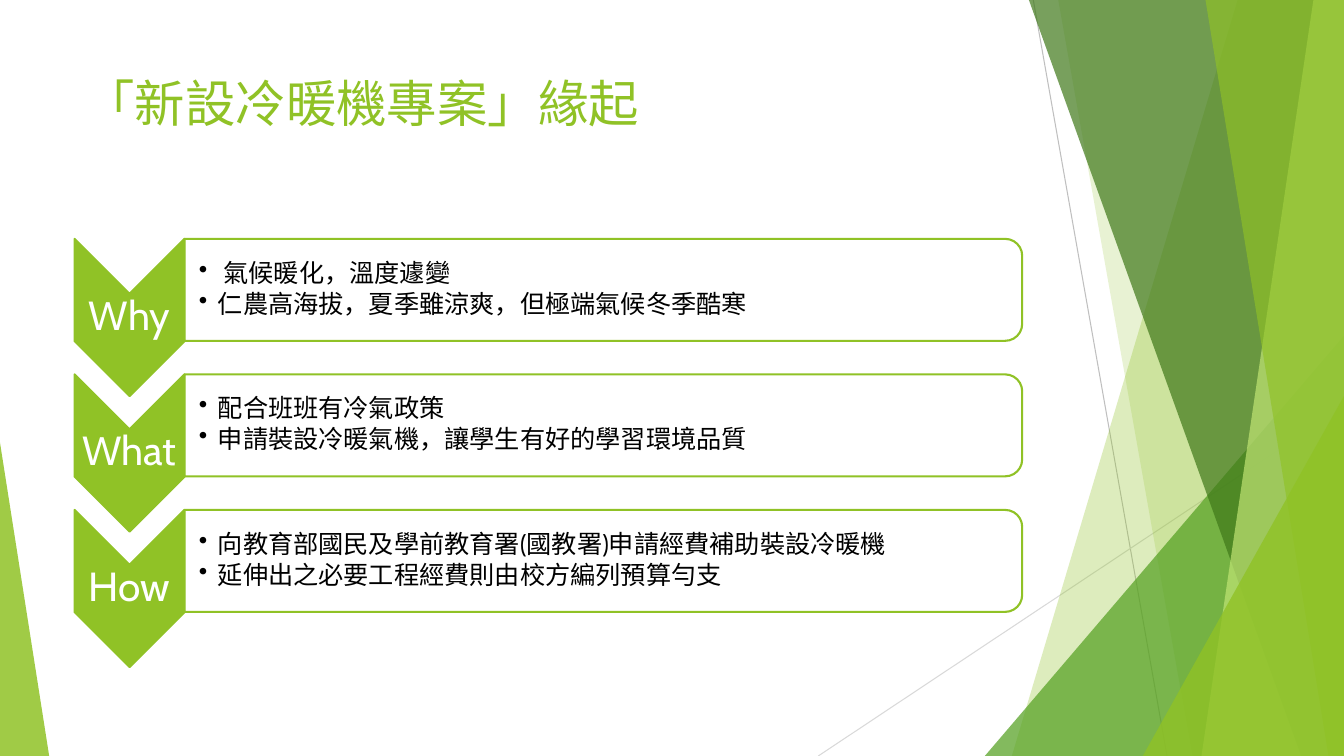
from dataclasses import dataclass

from lxml import etree
from pptx import Presentation
from pptx import util as u
from pptx.dml.color import RGBColor
from pptx.enum import shapes, text
from pptx.oxml.ns import qn

WIDTH, HEIGHT = 33.87, 19.05
STEP_TOP, STEP_PITCH = 6.02, 3.415
STEPS = [
    ("Why", [" 氣候暖化，溫度遽變", "仁農高海拔，夏季雖涼爽，但極端氣候冬季酷寒"]),
    ("What", ["配合班班有冷氣政策", "申請裝設冷暖氣機，讓學生有好的學習環境品質"]),
    ("How", ["向教育部國民及學前教育署(國教署)申請經費補助裝設冷暖機",
             "延伸出之必要工程經費則由校方編列預算勻支"]),
]


@dataclass(frozen=True)
class Theme:
    """Colours, font and type sizes of the deck."""
    lime: str = "90C226"
    green: str = "54A021"
    forest: str = "3F7819"
    pale: str = "C0E474"
    white: str = "FFFFFF"
    black: str = "000000"
    gray: str = "BFBFBF"
    light_gray: str = "D9D9D9"
    font: str = "Cabin"
    title: int = 36
    label: int = 29
    body: int = 18


def write_text(frame, lines, *, font, size, color, align=text.PP_ALIGN.LEFT,
               line_spacing=1.0, space_after=0, bullet_indent=0):
    """Write each line as a paragraph, bulleted when an indent is given."""
    for index, line in enumerate(lines):
        paragraph = frame.add_paragraph() if index else frame.paragraphs[0]
        paragraph.alignment = align
        paragraph.line_spacing = line_spacing
        paragraph.space_after = u.Pt(space_after)
        run = paragraph.add_run()
        run.text = line
        run.font.name = font
        run.font.size = u.Pt(size)
        run.font.color.rgb = RGBColor.from_string(color)
        if bullet_indent:
            properties = paragraph._p.get_or_add_pPr()
            properties.set("marL", str(u.Cm(bullet_indent)))
            properties.set("indent", str(-u.Cm(bullet_indent)))
            etree.SubElement(properties, qn("a:buChar")).set("char", "•")


class SlideBuilder:
    """Draws styled elements on the current slide, measured in centimetres."""

    def __init__(self, slide, theme):
        self.slide = slide
        self.theme = theme

    def paint(self, shape, color, opacity=100, outline=None):
        """Set the fill, its opacity and the outline of a shape."""
        shape.shadow.inherit = False
        shape.fill.solid()
        shape.fill.fore_color.rgb = RGBColor.from_string(color)
        if opacity < 100:
            fill_color = shape._element.spPr.find(qn("a:solidFill"))[0]
            etree.SubElement(fill_color, qn("a:alpha")).set("val", str(opacity * 1000))
        if outline:
            shape.line.color.rgb = RGBColor.from_string(outline)
            shape.line.width = u.Pt(1.5)
        else:
            shape.line.fill.background()

    def line(self, start, end, color):
        """Draw a thin straight line."""
        connector = self.slide.shapes.add_connector(
            shapes.MSO_CONNECTOR.STRAIGHT, *(u.Cm(value) for value in start + end))
        connector.line.color.rgb = RGBColor.from_string(color)
        connector.line.width = u.Pt(0.75)
        etree.SubElement(connector._element.spPr, qn("a:effectLst"))

    def facet(self, top_x, bottom_x, color, opacity):
        """Draw a full-height panel from a slanted edge to the right side."""
        corners = [(WIDTH, 0), (WIDTH, HEIGHT), (bottom_x, HEIGHT)]
        builder = self.slide.shapes.build_freeform(u.Cm(top_x), 0)
        builder.add_line_segments([(u.Cm(x), u.Cm(y)) for x, y in corners])
        self.paint(builder.convert_to_shape(), color, opacity)

    def corner(self, left, top, width, apex, color, opacity):
        """Draw a right triangle standing on the bottom edge."""
        shape = self.slide.shapes.add_shape(
            shapes.MSO_SHAPE.ISOSCELES_TRIANGLE, u.Cm(left), u.Cm(top),
            u.Cm(width), u.Cm(HEIGHT - top))
        shape.adjustments[0] = apex
        self.paint(shape, color, opacity)

    def turned(self, kind, left, top, width, height, color, opacity=100):
        """Draw a shape turned by 90 degrees that covers the given frame."""
        shift = (width - height) / 2
        shape = self.slide.shapes.add_shape(
            kind, u.Cm(left + shift), u.Cm(top - shift), u.Cm(height), u.Cm(width))
        shape.rotation = 90
        self.paint(shape, color, opacity, outline=self.theme.lime)

    def text(self, left, top, width, height, lines, *, margins,
             anchor=text.MSO_ANCHOR.MIDDLE, **style):
        """Place a text box with left and other margins."""
        box = self.slide.shapes.add_textbox(
            u.Cm(left), u.Cm(top), u.Cm(width), u.Cm(height))
        frame = box.text_frame
        frame.word_wrap = True
        frame.vertical_anchor = anchor
        frame.margin_left = u.Cm(margins[0])
        frame.margin_top = frame.margin_right = frame.margin_bottom = u.Cm(margins[1])
        write_text(frame, lines, font=self.theme.font, **style)

    def backdrop(self):
        """Draw the lines and translucent panels behind the content."""
        theme = self.theme
        self.line((26.04, 0), (29.41, HEIGHT), theme.gray)
        self.line((WIDTH, 10.24), (20.62, HEIGHT), theme.light_gray)
        self.facet(31.19, 25.5, theme.lime, 30)
        self.facet(26.67, 30.05, theme.lime, 20)
        self.corner(24.82, 8.46, 9.05, 1, theme.green, 72)
        self.facet(25.93, 32.79, theme.forest, 70)
        self.facet(33.1, 30.28, theme.pale, 70)
        self.facet(30.38, 33.48, theme.lime, 65)
        self.corner(28.8, 9.98, 5.07, 1, theme.lime, 80)
        self.corner(0, 11.15, 1.24, 0, theme.lime, 85)

    def step(self, top, label, lines):
        """Draw one chevron with its label and bulleted panel."""
        theme = self.theme
        self.turned(shapes.MSO_SHAPE.CHEVRON, 1.88, top, 2.77, 3.96, theme.lime)
        self.text(1.88, top + 1.37, 2.77, 1.19, [label], margins=(0.05, 0.05),
                  size=theme.label, color=theme.white,
                  align=text.PP_ALIGN.CENTER, line_spacing=0.9)
        self.turned(shapes.MSO_SHAPE.ROUND_2_SAME_RECTANGLE, 4.65, top, 21.11, 2.57,
                    theme.white, 90)
        self.text(4.65, top + 0.12, 20.98, 2.31, lines, margins=(0.36, 0.03),
                  size=theme.body, color=theme.black, line_spacing=0.9,
                  space_after=2.7, bullet_indent=0.48)


def main():
    """Build and save the slide."""
    presentation = Presentation()
    presentation.slide_width = u.Cm(WIDTH)
    presentation.slide_height = u.Cm(HEIGHT)
    slide = presentation.slides.add_slide(presentation.slide_layouts[6])
    theme = Theme()
    builder = SlideBuilder(slide, theme)
    builder.backdrop()
    builder.text(1.88, 1.7, 23.88, 3.66, ["「新設冷暖機專案」緣起"],
                 margins=(0.25, 0.13), anchor=text.MSO_ANCHOR.TOP,
                 size=theme.title, color=theme.lime)
    for index, (label, lines) in enumerate(STEPS):
        builder.step(STEP_TOP + index * STEP_PITCH, label, lines)
    presentation.save("out.pptx")


if __name__ == "__main__":
    main()
